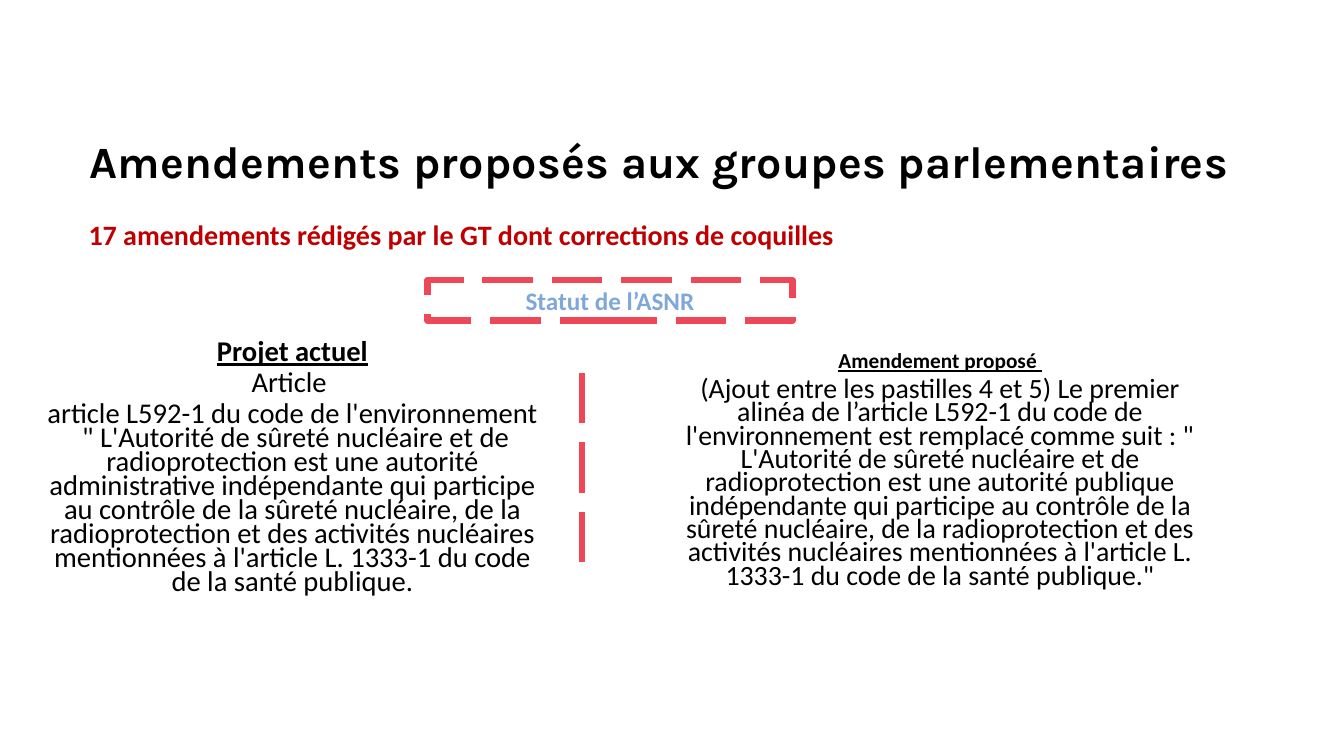
from lxml.etree import SubElement
from pptx import Presentation
from pptx.dml.color import RGBColor
from pptx.enum.dml import MSO_LINE
from pptx.enum.shapes import MSO_CONNECTOR, MSO_SHAPE
from pptx.enum.text import MSO_ANCHOR, PP_ALIGN
from pptx.oxml.ns import qn
from pptx.util import Inches, Pt


def rgb(code):
    return RGBColor.from_string(code)


class AmendmentSlide:
    BLACK, RED, CORAL, BLUE = "000000", "C00000", "EE4757", "7FA8D9"
    BODY_FONT, TITLE_FONT = "Calibri", "Karla"

    def __init__(self, slide):
        self.slide = slide

    def style(self, paragraph, size, color=BLACK, bold=False, underline=False, face=BODY_FONT):
        font = paragraph.font
        font.name, font.size, font.bold = face, Pt(size), bold
        font.underline = underline
        font.color.rgb = rgb(color)

    def dash(self, line):
        line.color.rgb = rgb(self.CORAL)
        line.width = Pt(4.5)
        line.dash_style = MSO_LINE.LONG_DASH

    def text_frame(self, left, top, width, height):
        box = self.slide.shapes.add_textbox(*map(Inches, (left, top, width, height)))
        box.text_frame.word_wrap = True
        return box.text_frame

    def title(self, text, *place):
        frame = self.text_frame(*place)
        frame.margin_left = frame.margin_top = frame.margin_right = frame.margin_bottom = 0
        heading = frame.paragraphs[0]
        heading.line_spacing = Pt(43)
        run = heading.add_run()
        run.text = text
        run.font.language_id = None
        run.font._element.set("spc", "20")
        self.style(heading, 32, bold=True, face=self.TITLE_FONT)

    def indented(self, entries, *place, spacing=0.7, align=PP_ALIGN.CENTER):
        """Write (text, style) entries as paragraphs with a half-inch left indent."""
        frame = self.text_frame(*place)
        for index, (text, look) in enumerate(entries):
            paragraph = frame.add_paragraph() if index else frame.paragraphs[0]
            paragraph.text = text
            paragraph.alignment = align
            paragraph.line_spacing = spacing
            paragraph.space_before = Pt(5 if index else 0)
            properties = paragraph._p.get_or_add_pPr()
            properties.set("marL", str(Inches(0.5)))
            properties.set("indent", "0")
            self.style(paragraph, **look)

    def dashed_label(self, text, *place):
        label = self.slide.shapes.add_shape(MSO_SHAPE.RECTANGLE, *map(Inches, place))
        label.shadow.inherit = False
        label.fill.background()
        self.dash(label.line)
        frame = label.text_frame
        frame.word_wrap = True
        frame.vertical_anchor = MSO_ANCHOR.MIDDLE
        caption = frame.paragraphs[0]
        caption.text = text
        caption.alignment = PP_ALIGN.CENTER
        self.style(caption, 18, self.BLUE, bold=True)

    def divider(self, x, top, bottom):
        rule = self.slide.shapes.add_connector(
            MSO_CONNECTOR.STRAIGHT, *map(Inches, (x, top, x, bottom)))
        self.dash(rule.line)
        SubElement(rule._element.spPr, qn("a:effectLst"))


def main():
    deck = Presentation()
    deck.slide_width, deck.slide_height = Inches(13.33), Inches(7.5)
    page = AmendmentSlide(deck.slides.add_slide(deck.slide_layouts[6]))

    page.title("Amendements proposés aux groupes parlementaires", 0.89, 1.26, 11.66, 1.04)
    page.indented(
        [("17 amendements rédigés par le GT dont corrections de coquilles",
          dict(size=20, color=page.RED, bold=True))],
        0.28, 2.15, 12.27, 0.82, spacing=0.9, align=PP_ALIGN.LEFT)
    page.divider(5.77, 3.7, 5.68)

    current = dict(size=20.4)
    page.indented(
        [("Projet actuel", dict(current, bold=True, underline=True)),
         ("Article ", current),
         ("article L592-1 du code de l'environnement  \" L'Autorité de sûreté nucléaire "
          "et de radioprotection est une autorité administrative indépendante qui participe "
          "au contrôle de la sûreté nucléaire, de la radioprotection et des activités "
          "nucléaires mentionnées à l'article L. 1333-1 du code de la santé publique.",
          current)],
        -0.13, 3.35, 5.56, 2.89)
    page.indented(
        [("Amendement proposé ", dict(size=15.2, bold=True, underline=True)),
         ("(Ajout entre les pastilles 4 et 5) Le premier alinéa de l’article L592-1 du code "
          "de l'environnement est remplacé comme suit : \" L'Autorité de sûreté nucléaire et "
          "de radioprotection est une autorité publique indépendante qui participe au "
          "contrôle de la sûreté nucléaire, de la radioprotection et des activités nucléaires "
          "mentionnées à l'article L. 1333-1 du code de la santé publique.\"",
          dict(size=19.9))],
        6.11, 3.47, 5.93, 3.27)
    page.dashed_label("Statut de l’ASNR", 4.24, 2.78, 3.62, 0.4)

    deck.save("out.pptx")


if __name__ == "__main__":
    main()
